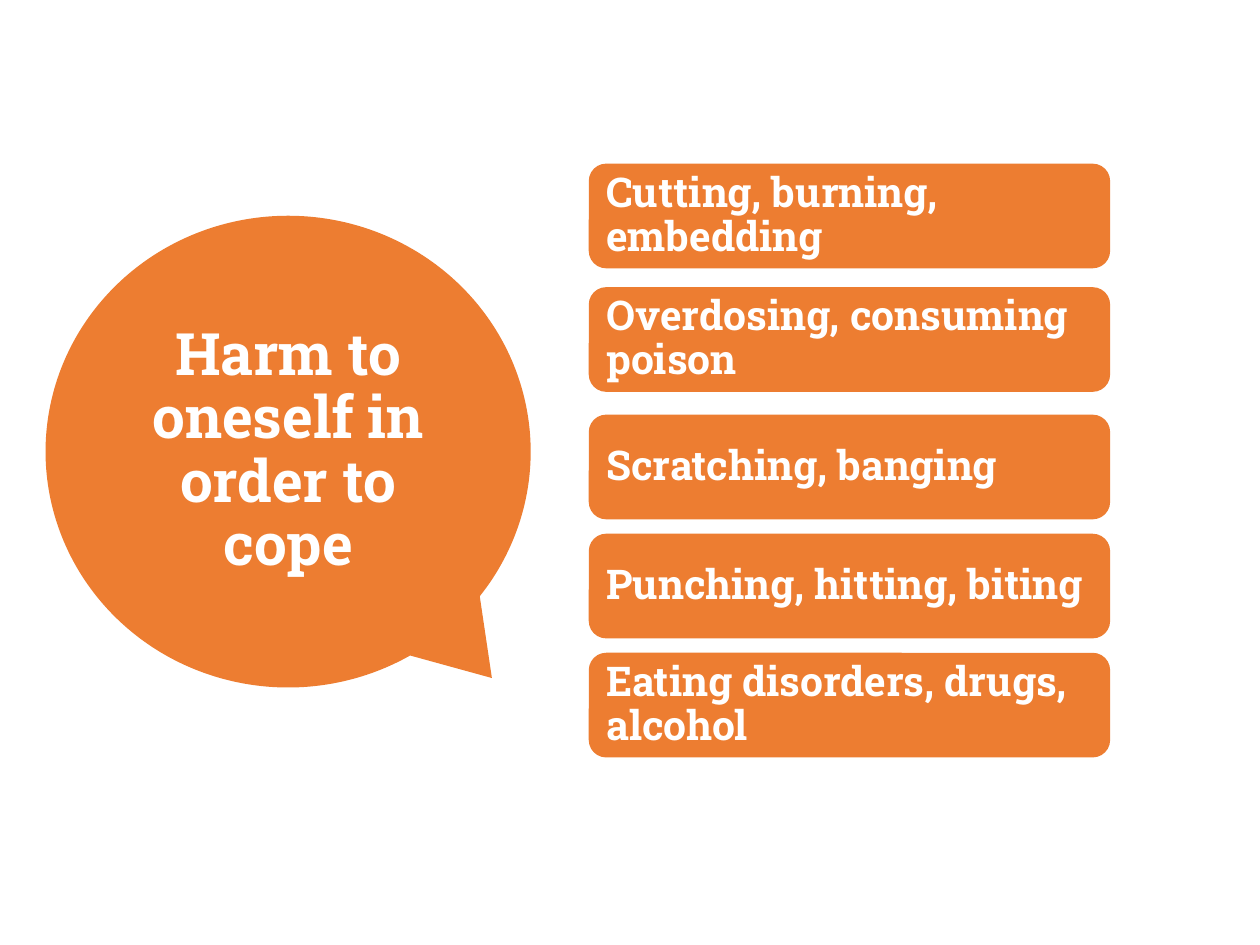
from pptx import Presentation
from pptx.dml.color import RGBColor
from pptx.enum.shapes import MSO_SHAPE as Shape
from pptx.enum.text import MSO_ANCHOR as Anchor, PP_ALIGN as Align
from pptx.util import Cm, Pt

ORANGE = RGBColor(0xED, 0x7D, 0x31)
WHITE = RGBColor(0xFF, 0xFF, 0xFF)
FONT = "Roboto Slab"

EXAMPLES = [
    ("Cutting, burning, embedding", 3.3),
    ("Overdosing, consuming poison", 5.79),
    ("Scratching, banging", 8.36),
    ("Punching, hitting, biting", 10.76),
    ("Eating disorders, drugs, alcohol", 13.16),
]


def write_text(box, text, *, size, align=Align.LEFT):
    frame = box.text_frame
    frame.word_wrap = True
    frame.vertical_anchor = Anchor.MIDDLE
    para = frame.paragraphs[0]
    para.alignment = align
    para.line_spacing = 0.9
    span = para.add_run()
    span.text = text
    span.font.name = FONT
    span.font.size = Pt(size)
    span.font.bold = True
    span.font.color.rgb = WHITE


def add_orange_shape(page, kind, left, top, width, height):
    box = page.shapes.add_shape(kind, Cm(left), Cm(top), Cm(width), Cm(height))
    box.shadow.inherit = False
    box.fill.solid()
    box.fill.fore_color.rgb = ORANGE
    box.line.fill.background()
    return box


def add_definition(page, text):
    bubble = add_orange_shape(page, Shape.OVAL_CALLOUT, 0.92, 4.35, 9.78, 9.51)
    bubble.adjustments[0] = 0.42
    bubble.adjustments[1] = 0.48
    write_text(bubble, text, size=33.4, align=Align.CENTER)


def add_example(page, text, top):
    box = add_orange_shape(page, Shape.ROUNDED_RECTANGLE, 11.87, top, 10.51, 2.11)
    write_text(box, text, size=23.4)


def main():
    deck = Presentation()
    deck.slide_width = Cm(25.4)
    deck.slide_height = Cm(19.05)
    page = deck.slides.add_slide(deck.slide_layouts[6])
    add_definition(page, "Harm to oneself in order to cope")
    for text, top in EXAMPLES:
        add_example(page, text, top)
    deck.save("out.pptx")


if __name__ == "__main__":
    main()
